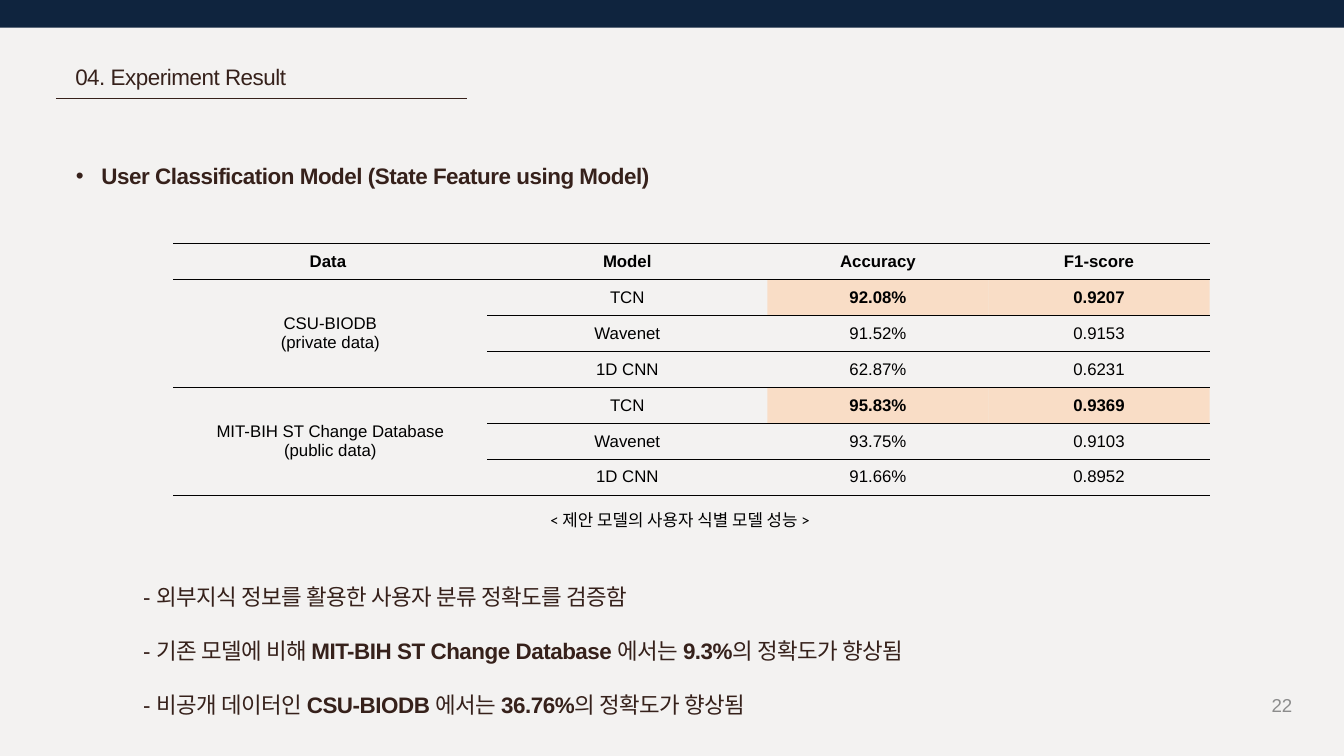
from lxml import etree
from pptx import Presentation
from pptx import util as u
from pptx.dml.color import RGBColor
from pptx.enum import shapes, text
from pptx.oxml.ns import qn

SCALE = 9144
COLORS = {"paper": "F3F2F1", "navy": "0F243E", "brown": "36211B",
          "gray": "8C8C8C", "black": "000000", "peach": "FCD5B5"}
NO_TABLE_STYLE = "{2D5ABB26-0587-4C30-8999-92F81FD0307C}"

FLUSH = {"margin_left": 0, "margin_top": 0, "margin_right": 0, "margin_bottom": 0,
         "word_wrap": True, "vertical_anchor": text.MSO_ANCHOR.TOP}
CENTERED = {"alignment": text.PP_ALIGN.CENTER}
BODY = {"name": "Arial", "size": u.Pt(24), "bold": False, "color": "brown"}
CELL = {"name": "Arial", "size": u.Pt(18), "color": "black"}
NUMBER = {"name": "Arial", "size": u.Pt(20), "color": "gray"}
CAPTION = {"name": "Calibri", "size": u.Pt(18), "color": "black"}

HEADER = ["Data ", "Model", "Accuracy", "F1-score"]
RESULTS = {
    "CSU-BIODB\n(private data)": [("TCN", "92.08%", "0.9207"),
                                  ("Wavenet", "91.52%", "0.9153"),
                                  ("1D CNN", "62.87%", "0.6231")],
    "MIT-BIH ST Change Database\n(public data)": [("TCN", "95.83%", "0.9369"),
                                                  ("Wavenet", "93.75%", "0.9103"),
                                                  ("1D CNN", "91.66%", "0.8952")],
}
COLUMN_WIDTHS = [467, 417, 329, 329]
FULL_RULES = {0: 1.5, 1: 1.5, 4: 1, 7: 1.5}
INNER_RULES = {2: 1, 5: 1}

FINDINGS = [
    [("- 외부지식 정보를 활용한 사용자 분류 정확도를 검증함", False)],
    [("- 기존 모델에 비해 ", False), ("MIT-BIH ST Change Database ", True),
     ("에서는 ", False), ("9.3%", True), ("의 정확도가 향상됨", False)],
    [("- 비공개 데이터인 ", False), ("CSU-BIODB ", True),
     ("에서는 ", False), ("36.76%", True), ("의 정확도가 향상됨", False)],
]


def px(*lengths):
    """Turn whole px into EMU."""
    return [u.Emu(length * SCALE) for length in lengths]


def rgb(name):
    """Look up a named colour."""
    return RGBColor.from_string(COLORS[name])


def apply(target, values):
    """Set each format value on the target."""
    for name, value in values.items():
        if name == "color":
            target.color.rgb = rgb(value)
        else:
            setattr(target, name, value)


def write(paragraph, pieces, font, layout, spacing=None):
    """Fill a paragraph with (wording, bold) pieces."""
    apply(paragraph, layout)
    for wording, bold in pieces:
        run = paragraph.add_run()
        run.text = wording
        apply(run.font, {**font, "bold": bold})
        if spacing is not None:
            run._r.get_or_add_rPr().set("spc", str(spacing))


def place(shape, box):
    """Move and size a shape."""
    apply(shape, dict(zip(("left", "top", "width", "height"), px(*box))))


def add_title(slide, wording):
    """Format the title placeholder as the section heading."""
    place(slide.shapes.title, (112, 87, 362, 43))
    frame = slide.shapes.title.text_frame
    apply(frame, FLUSH)
    layout = {"alignment": text.PP_ALIGN.LEFT, "line_spacing": u.Pt(33.6)}
    write(frame.paragraphs[0], [(wording, False)], BODY, layout, -50)


def add_text(slide, box, lines, font, frame_values, layout, spacing=None):
    """Add a text box with one paragraph per line and return its frame."""
    frame = slide.shapes.add_textbox(*px(*box)).text_frame
    apply(frame, frame_values)
    for index, pieces in enumerate(lines):
        paragraph = frame.add_paragraph() if index else frame.paragraphs[0]
        write(paragraph, pieces, font, layout, spacing)
    return frame


def add_bullet(paragraph):
    """Give a paragraph a round bullet with a hanging indent."""
    properties = paragraph._p.get_or_add_pPr()
    indent = px(38)[0]
    properties.set("marL", str(indent))
    properties.set("indent", str(-indent))
    etree.SubElement(properties, qn("a:buFont"), typeface="Arial")
    etree.SubElement(properties, qn("a:buChar"), char="•")


def add_bar(slide, box, color):
    """Add a plain filled bar."""
    bar = slide.shapes.add_shape(shapes.MSO_SHAPE.RECTANGLE, *px(*box))
    bar.shadow.inherit = False
    bar.fill.solid()
    bar.fill.fore_color.rgb = rgb(color)
    bar.line.fill.background()


def add_rule(slide, ends, color):
    """Add a thin straight line."""
    rule = slide.shapes.add_connector(shapes.MSO_CONNECTOR.STRAIGHT, *px(*ends))
    rule.line.width = u.Pt(0.75)
    rule.line.color.rgb = rgb(color)
    etree.SubElement(rule._element.spPr, qn("a:effectLst"))


def add_border(cell, side, width):
    """Draw one black border of a cell."""
    border = etree.SubElement(cell._tc.get_or_add_tcPr(), qn(f"a:{side}"),
                              w=str(u.Pt(width)))
    fill = etree.SubElement(border, qn("a:solidFill"))
    etree.SubElement(fill, qn("a:srgbClr"), val=COLORS["black"])


def fill_cell(cell, best):
    """Fill a cell, translucent peach for a best score."""
    cell.fill.solid()
    cell.fill.fore_color.rgb = rgb("peach" if best else "paper")
    if best:
        tint = cell._tc.tcPr.find(f".//{qn('a:solidFill')}[last()]")
        tint = cell._tc.tcPr.findall(qn("a:solidFill"))[0][0]
        etree.SubElement(tint, qn("a:alpha"), val="70000")


def format_cell(cell, wording, row, column):
    """Write, rule and fill one table cell."""
    best = column > 1 and row % 3 == 1
    rules = {**FULL_RULES, **(INNER_RULES if column else {})}
    for side, edge in (("lnT", row), ("lnB", row + cell.span_height)):
        if edge in rules:
            add_border(cell, side, rules[edge])
    fill_cell(cell, best)
    cell.vertical_anchor = text.MSO_ANCHOR.MIDDLE
    for index, line in enumerate(wording.split("\n")):
        frame = cell.text_frame
        paragraph = frame.add_paragraph() if index else frame.paragraphs[0]
        write(paragraph, [(line, best or row == 0)], CELL, CENTERED)


def add_results(slide):
    """Add the table of model scores, with merged data names."""
    rows = [HEADER]
    for data, scores in RESULTS.items():
        rows += [[data if index == 0 else "", *score]
                 for index, score in enumerate(scores)]
    box = px(258, 362, sum(COLUMN_WIDTHS), 375)
    table = slide.shapes.add_table(len(rows), len(HEADER), *box).table
    apply(table, {"first_row": False, "horz_banding": False})
    table._tbl.tblPr.find(qn("a:tableStyleId")).text = NO_TABLE_STYLE
    for column, width in zip(table.columns, px(*COLUMN_WIDTHS)):
        column.width = width
    for first in (1, 4):
        table.cell(first, 0).merge(table.cell(first + 2, 0))
    for row, wordings in enumerate(rows):
        for column, wording in enumerate(wordings):
            format_cell(table.cell(row, column), wording, row, column)


def main():
    """Build the experiment result slide."""
    deck = Presentation()
    deck.slide_width, deck.slide_height = px(2000, 1125)
    slide = deck.slides.add_slide(deck.slide_layouts[5])
    slide.background.fill.solid()
    slide.background.fill.fore_color.rgb = rgb("paper")

    add_bar(slide, (0, 0, 2000, 41), "navy")
    add_title(slide, "04. Experiment Result")
    add_text(slide, (1700, 1029, 233, 40), [[("22", False)]], NUMBER,
             {"word_wrap": True, "vertical_anchor": text.MSO_ANCHOR.MIDDLE},
             {"alignment": text.PP_ALIGN.RIGHT})
    add_rule(slide, (83, 146, 695, 146), "brown")
    heading = add_text(slide, (113, 221, 1771, 58),
                       [[("User Classification Model (State Feature using Model)", True)]],
                       BODY, FLUSH, {"line_spacing": 1.5}, -50)
    add_bullet(heading.paragraphs[0])
    add_results(slide)
    add_text(slide, (809, 754, 439, 40), [[("< 제안 모델의 사용자 식별 모델 성능 >", False)]],
             CAPTION, {"word_wrap": False, "auto_size": text.MSO_AUTO_SIZE.SHAPE_TO_FIT_TEXT}, {})
    add_text(slide, (213, 828, 1671, 240), FINDINGS, BODY, FLUSH, {"line_spacing": 2.0}, -50)
    deck.save("out.pptx")


if __name__ == "__main__":
    main()
